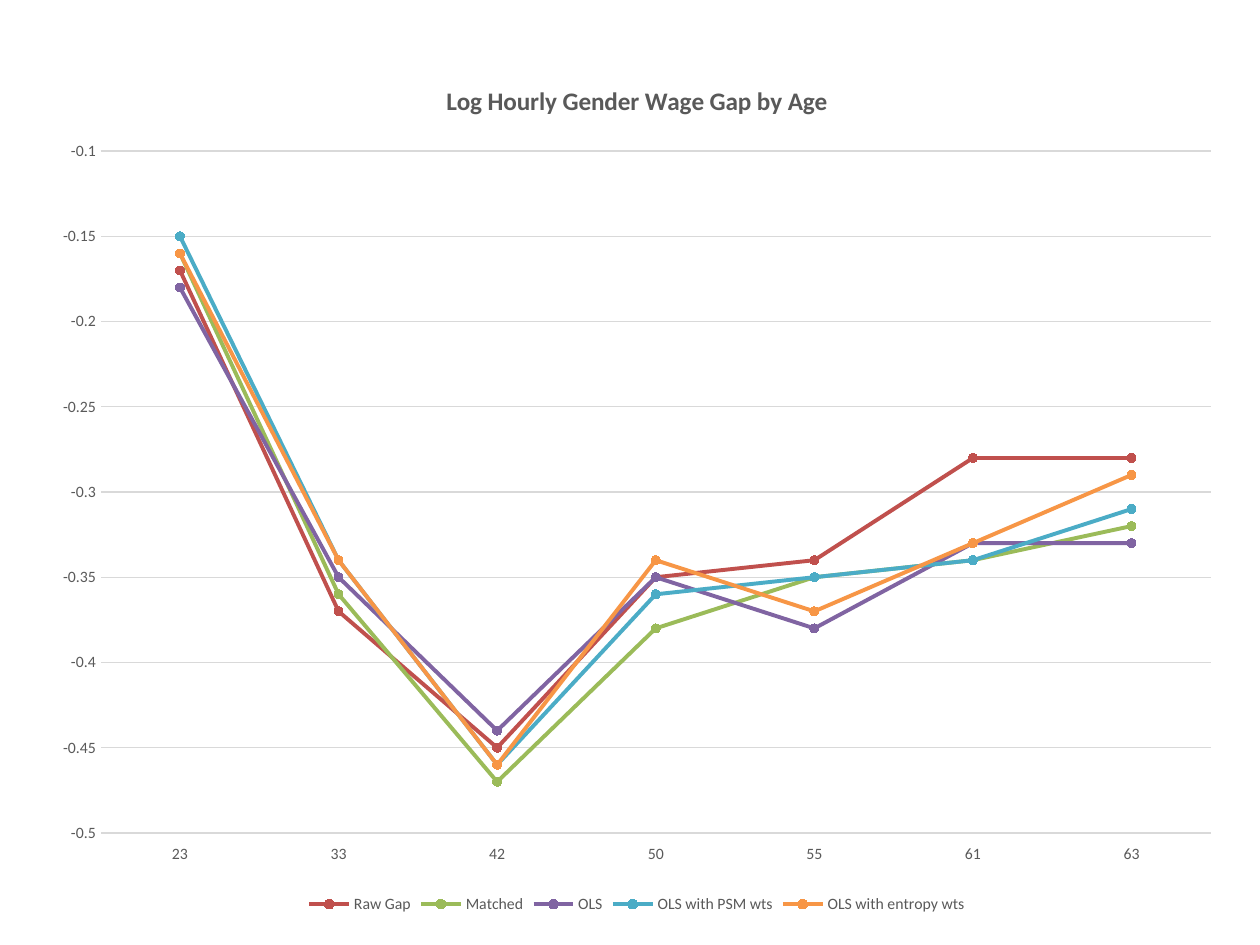
from pptx import Presentation
from pptx.chart.data import CategoryChartData
from pptx.dml.color import RGBColor
from pptx.enum.chart import (XL_CHART_TYPE, XL_LEGEND_POSITION, XL_MARKER_STYLE,
                             XL_TICK_LABEL_POSITION, XL_TICK_MARK)
from pptx.util import Inches, Pt

LINE_MARKERS = XL_CHART_TYPE.LINE_MARKERS
BOTTOM = XL_LEGEND_POSITION.BOTTOM
CIRCLE = XL_MARKER_STYLE.CIRCLE
LOW = XL_TICK_LABEL_POSITION.LOW
NO_TICK = XL_TICK_MARK.NONE
FONT = "Calibri"
COLORS = {
    "text": "595959",
    "grid": "D9D9D9",
    "Raw Gap": "C0504D",
    "Matched": "9BBB59",
    "OLS": "8064A2",
    "OLS with PSM wts": "4BACC6",
    "OLS with entropy wts": "F79646",
}
AGES = ["23", "33", "42", "50", "55", "61", "63"]
WAGE_GAPS = {
    "Raw Gap": [-0.17, -0.37, -0.45, -0.35, -0.34, -0.28, -0.28],
    "Matched": [-0.16, -0.36, -0.47, -0.38, -0.35, -0.34, -0.32],
    "OLS": [-0.18, -0.35, -0.44, -0.35, -0.38, -0.33, -0.33],
    "OLS with PSM wts": [-0.15, -0.34, -0.46, -0.36, -0.35, -0.34, -0.31],
    "OLS with entropy wts": [-0.16, -0.34, -0.46, -0.34, -0.37, -0.33, -0.29],
}


def style_font(font, size, bold=False):
    font.name = FONT
    font.size = Pt(size)
    font.bold = bold
    font.color.rgb = RGBColor.from_string(COLORS["text"])


def style_line(line, color, width):
    line.color.rgb = RGBColor.from_string(COLORS[color])
    line.width = Pt(width)


presentation = Presentation()
presentation.slide_width = Inches(10)
presentation.slide_height = Inches(7.5)
slide = presentation.slides.add_slide(presentation.slide_layouts[6])

chart_data = CategoryChartData()
chart_data.categories = AGES
for name, gaps in WAGE_GAPS.items():
    chart_data.add_series(name, gaps)

chart = slide.shapes.add_chart(LINE_MARKERS, Inches(0.31), Inches(0.44),
                               Inches(9.49), Inches(6.85), chart_data).chart
style_font(chart.font, 10)

chart.has_title = True
title_frame = chart.chart_title.text_frame
title_frame.text = "Log Hourly Gender Wage Gap by Age"
style_font(title_frame.paragraphs[0].font, 14.4, bold=True)
chart.chart_title.include_in_layout = False

chart.has_legend = True
chart.legend.position = BOTTOM
chart.legend.include_in_layout = False
style_font(chart.legend.font, 9)

for axis in (chart.category_axis, chart.value_axis):
    axis.major_tick_mark = NO_TICK
    axis.minor_tick_mark = NO_TICK
    style_font(axis.tick_labels.font, 9)

chart.category_axis.tick_label_position = LOW
style_line(chart.category_axis.format.line, "grid", 0.75)

value_axis = chart.value_axis
value_axis.minimum_scale = -0.5
value_axis.maximum_scale = -0.1
value_axis.major_unit = 0.05
value_axis.format.line.fill.background()
value_axis.has_major_gridlines = True
style_line(value_axis.major_gridlines.format.line, "grid", 0.75)

chart.plots[0].vary_by_categories = False
for series in chart.plots[0].series:
    series.smooth = False
    style_line(series.format.line, series.name, 2.25)
    series.marker.style = CIRCLE
    series.marker.size = 5
    series.marker.format.fill.solid()
    series.marker.format.fill.fore_color.rgb = RGBColor.from_string(COLORS[series.name])
    style_line(series.marker.format.line, series.name, 0.75)

presentation.save("out.pptx")
